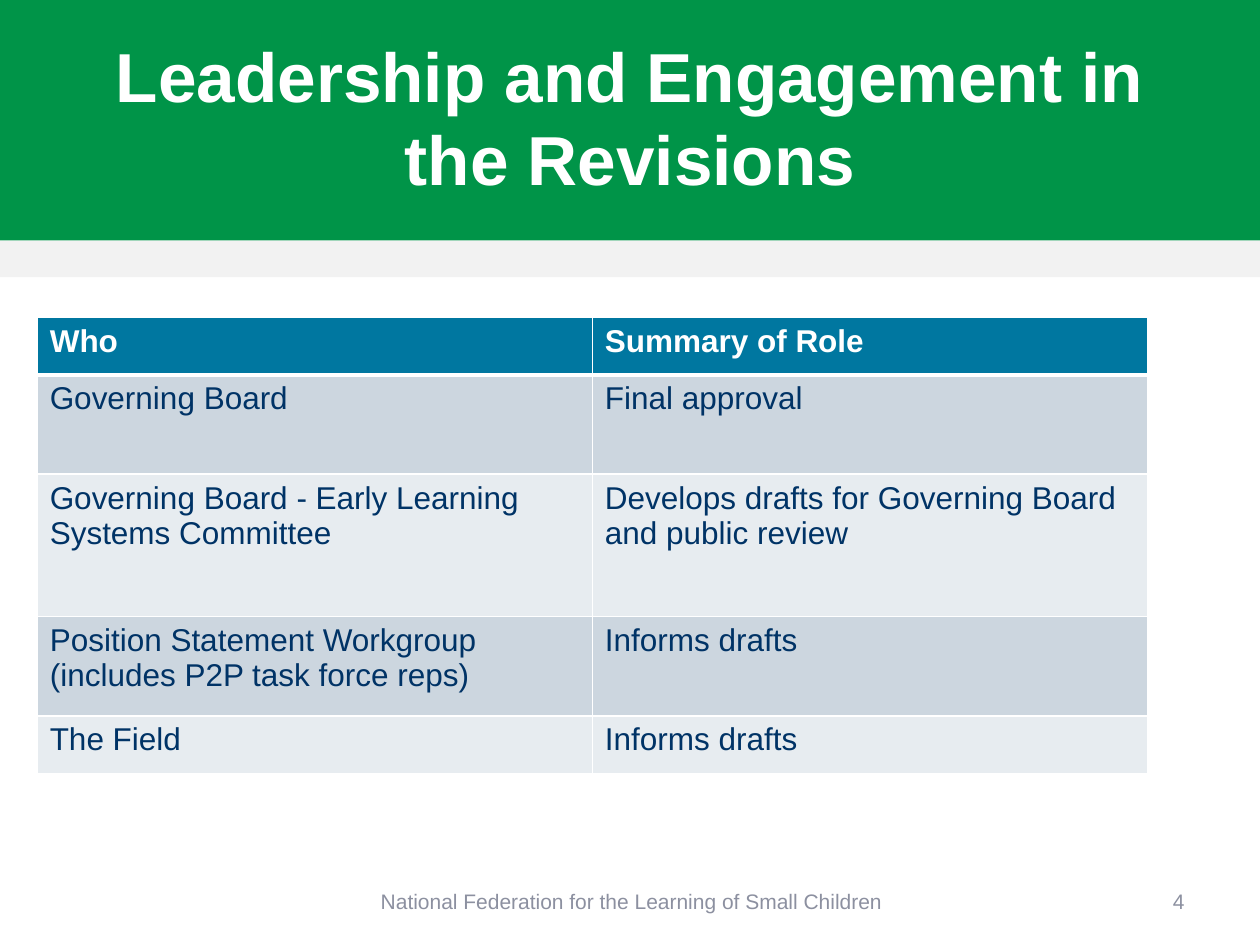
from lxml.etree import SubElement
from pptx import Presentation
from pptx.dml.color import RGBColor
from pptx.enum.shapes import MSO_SHAPE
from pptx.enum.text import MSO_ANCHOR, PP_ALIGN
from pptx.oxml.ns import qn
from pptx.util import Cm, Pt

COLORS = {
    "green": "009448",
    "strip": "F2F2F2",
    "white": "FFFFFF",
    "header": "0077A0",
    "band_dark": "CCD6DF",
    "band_light": "E7ECF0",
    "navy": "003366",
    "footer": "8C90A0",
}
FONT = "Arial"
ROLES = [
    ("Who", "Summary of Role"),
    ("Governing Board", "Final approval"),
    ("Governing Board - Early Learning Systems Committee",
     "Develops drafts for Governing Board and public review"),
    ("Position Statement Workgroup (includes P2P task force reps)", "Informs drafts"),
    ("The Field", "Informs drafts"),
]
ROW_HEIGHTS = [1.16, 2, 2.87, 2, 1.16]


def rgb(name):
    """Return the named colour."""
    return RGBColor.from_string(COLORS[name])


def write(frame, text, size, color, bold=False, align=PP_ALIGN.LEFT):
    """Put one formatted paragraph into a text frame."""
    frame.text = text
    para = frame.paragraphs[0]
    para.alignment = align
    font = para.runs[0].font
    font.name, font.size, font.bold = FONT, Pt(size), bold
    font.color.rgb = rgb(color)


def add_band(page, left, top, width, height, color):
    """Add a plain filled rectangle."""
    band = page.shapes.add_shape(
        MSO_SHAPE.RECTANGLE, Cm(left), Cm(top), Cm(width), Cm(height))
    band.shadow.inherit = False
    band.fill.solid()
    band.fill.fore_color.rgb = rgb(color)
    band.line.fill.background()


def add_label(page, left, top, width, height, text, size, color, align, bold=False):
    """Add a wrapped, vertically centred text box."""
    box = page.shapes.add_textbox(Cm(left), Cm(top), Cm(width), Cm(height))
    frame = box.text_frame
    frame.word_wrap = True
    frame.vertical_anchor = MSO_ANCHOR.MIDDLE
    write(frame, text, size, color, bold, align)


def add_heading(page, left, top, width, height):
    """Add the green heading with the pale strip below it."""
    strip_height = 0.74
    green_height = height - strip_height
    add_band(page, left, top + green_height, width, strip_height, "strip")
    add_band(page, left, top, width, green_height, "green")
    add_label(page, left + 1.27, top + 0.76, width - 2.54, 3.18,
              "Leadership and Engagement in the Revisions",
              39.6, "white", PP_ALIGN.CENTER, True)


def add_border(cell, side, points):
    """Draw one white border of a cell."""
    line = SubElement(cell._tc.get_or_add_tcPr(), qn(f"a:ln{side}"), w=str(Pt(points)))
    fill = SubElement(line, qn("a:solidFill"))
    SubElement(fill, qn("a:srgbClr"), val=COLORS["white"])


def add_roles(page, left, top, width, height):
    """Add the table of groups and their roles."""
    table = page.shapes.add_table(
        len(ROLES), 2, Cm(left), Cm(top), Cm(width), Cm(height)).table
    for column in table.columns:
        column.width = Cm(width / 2)
    for index, texts in enumerate(ROLES):
        table.rows[index].height = Cm(ROW_HEIGHTS[index])
        is_header = index == 0
        band = "band_dark" if index % 2 else "band_light"
        widths = {"L": 1, "R": 1, "T": 3 if index == 1 else 1, "B": 3 if is_header else 1}
        for cell, text in zip(table.rows[index].cells, texts):
            for side, points in widths.items():
                add_border(cell, side, points)
            cell.fill.solid()
            cell.fill.fore_color.rgb = rgb("header" if is_header else band)
            write(cell.text_frame, text, 18, "white" if is_header else "navy", is_header)


def add_footer(page, left, top, width, height):
    """Add the organisation name and the page number."""
    number_width = 2.51
    add_label(page, left, top, 17.09, height,
              "National Federation for the Learning of Small Children",
              12, "footer", PP_ALIGN.CENTER)
    add_label(page, left + width - number_width, top, number_width, height,
              "4", 12, "footer", PP_ALIGN.RIGHT)


def main():
    """Build and save the deck."""
    deck = Presentation()
    deck.slide_width, deck.slide_height = Cm(25.4), Cm(19.05)
    page = deck.slides.add_slide(deck.slide_layouts[6])
    add_heading(page, 0, 0, 25.4, 5.59)
    add_footer(page, 4.19, 17.65, 19.94, 1.02)
    add_roles(page, 0.75, 6.4, 22.38, sum(ROW_HEIGHTS))
    deck.save("out.pptx")


if __name__ == "__main__":
    main()
